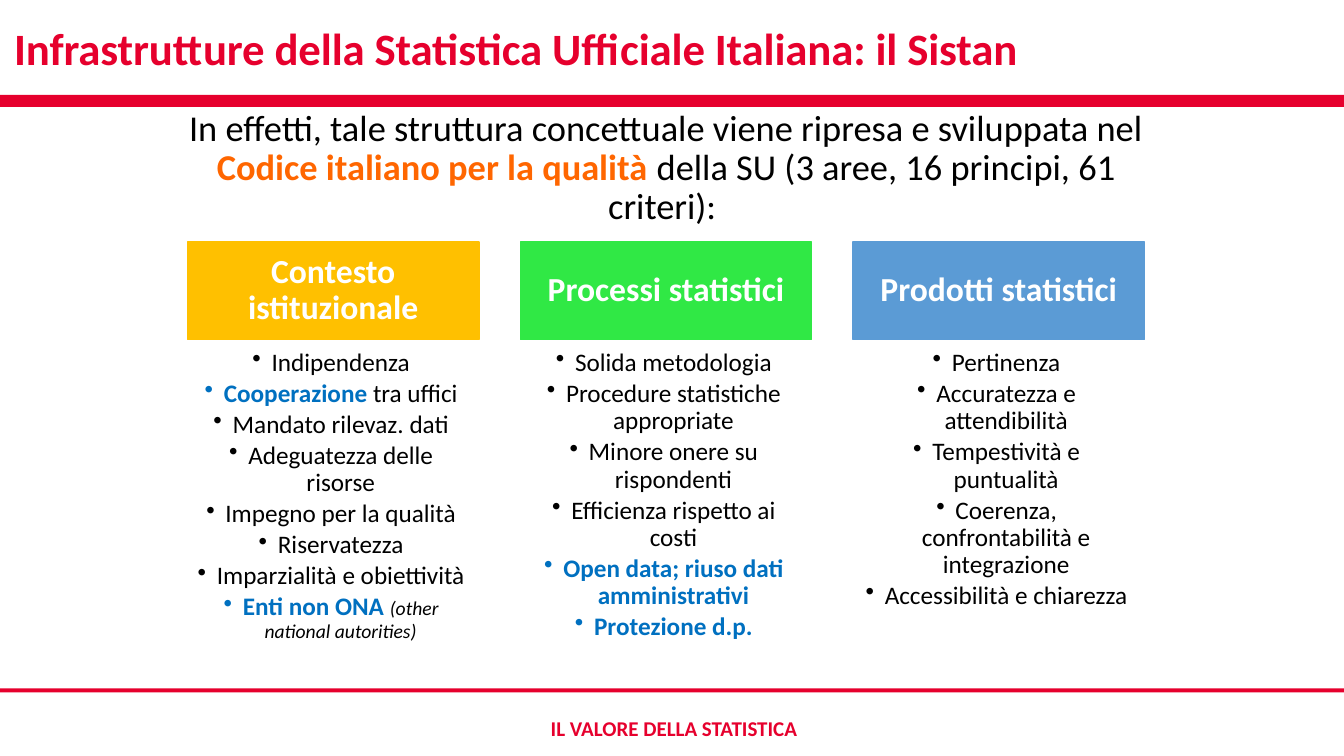
from lxml.etree import SubElement
from pptx import Presentation
from pptx.dml.color import RGBColor
from pptx.enum.shapes import MSO_SHAPE
from pptx.enum.text import MSO_ANCHOR as Anchor, PP_ALIGN as Align
from pptx.oxml.ns import qn
from pptx.util import Inches, Pt

COLORS = {"red": "E6002D", "black": "000000", "white": "FFFFFF", "orange": "FF6600",
          "blue": "0070C0", "amber": "FFC000", "green": "30E845", "sky": "5B9BD5"}


def add_runs(paragraph, runs, size):
    """Write (text, color, font options) runs into a paragraph."""
    for text, color, options in runs:
        run = paragraph.add_run()
        run.text = text
        formats = {"name": "Calibri", "size": Pt(size), "bold": False, **options}
        for attribute, value in formats.items():
            setattr(run.font, attribute, value)
        run.font.color.rgb = RGBColor.from_string(COLORS[color])


def set_frame(frame, anchor, margins):
    frame.word_wrap = True
    frame.vertical_anchor = anchor
    for side, margin in zip(("left", "top", "right", "bottom"), margins):
        setattr(frame, f"margin_{side}", Inches(margin))


BOLD = {"bold": True}
DEFAULT_MARGINS = (0.1, 0.05, 0.1, 0.05)

prs = Presentation()
prs.slide_width, prs.slide_height = Inches(13.33), Inches(7.5)
slide = prs.slides.add_slide(prs.slide_layouts[5])
shapes = slide.shapes

# Title
title = shapes.title
title.left, title.top, title.width, title.height = map(Inches, (0.04, 0.04, 13.13, 0.87))
set_frame(title.text_frame, Anchor.MIDDLE, DEFAULT_MARGINS)
title_line = title.text_frame.paragraphs[0]
title_line.alignment = Align.LEFT
add_runs(title_line, [("Infrastrutture della Statistica Ufficiale Italiana: il Sistan",
                       "red", BOLD)], 32)
title_line.runs[0].font._element.set("spc", "-10")

# Red rules under the title and above the footer
for top, height in ((0.94, 0.12), (6.83, 0.04)):
    rule = shapes.add_shape(MSO_SHAPE.RECTANGLE, 0, Inches(top), prs.slide_width, Inches(height))
    rule.shadow.inherit = False
    rule.fill.solid()
    rule.fill.fore_color.rgb = RGBColor.from_string(COLORS["red"])
    rule.line.fill.background()

# Introduction and footer
intro_runs = [
    ("In effetti, tale struttura concettuale viene ripresa e sviluppata nel ", "black", {}),
    ("Codice italiano per la qualità", "orange", BOLD),
    (" della SU (3 aree, 16 principi, 61 criteri): ", "black", {}),
]
footer_runs = [("IL VALORE DELLA STATISTICA", "red", BOLD)]
for place, runs, size, spacing in (((1.67, 1.04, 9.88, 1.3), intro_runs, 26, 0.9),
                                   ((2.83, 7.05, 7.71, 0.35), footer_runs, 15, 1.0)):
    box = shapes.add_textbox(*map(Inches, place))
    set_frame(box.text_frame, Anchor.TOP, DEFAULT_MARGINS)
    line = box.text_frame.paragraphs[0]
    line.alignment, line.line_spacing = Align.CENTER, spacing
    add_runs(line, runs, size)

# Areas of the code: heading, color, principles
areas = [
    ("Contesto istituzionale", "amber", [
        "Indipendenza",
        [("Cooperazione", "blue", BOLD), (" tra uffici", "black", {})],
        "Mandato rilevaz. dati",
        "Adeguatezza delle risorse",
        "Impegno per la qualità",
        "Riservatezza",
        "Imparzialità e obiettività",
        [("Enti non ONA ", "blue", BOLD),
         ("(other national autorities)", "black", {"size": Pt(14), "italic": True})],
    ]),
    ("Processi statistici", "green", [
        "Solida metodologia",
        "Procedure statistiche appropriate",
        "Minore onere su rispondenti",
        "Efficienza rispetto ai costi",
        [("Open data; riuso dati amministrativi", "blue", BOLD)],
        [("Protezione d.p.", "blue", BOLD)],
    ]),
    ("Prodotti statistici", "sky", [
        "Pertinenza",
        "Accuratezza e attendibilità",
        "Tempestività e puntualità",
        "Coerenza, confrontabilità e integrazione",
        "Accessibilità e chiarezza",
    ]),
]
LEFT, STEP, WIDTH = 1.86, 3.3, 2.89
HEADING_TOP, HEADING_HEIGHT, LIST_HEIGHT = 2.4, 0.97, 2.81

for column, (name, color, principles) in enumerate(areas):
    left = Inches(LEFT + column * STEP)

    # Colored heading
    heading = shapes.add_shape(MSO_SHAPE.RECTANGLE, left, Inches(HEADING_TOP),
                               Inches(WIDTH), Inches(HEADING_HEIGHT))
    heading.shadow.inherit = False
    heading.fill.solid()
    heading.fill.fore_color.rgb = RGBColor.from_string(COLORS[color])
    heading.line.color.rgb = RGBColor.from_string(COLORS[color])
    heading.line.width = Pt(1)
    set_frame(heading.text_frame, Anchor.MIDDLE, (0.19, 0.11, 0.19, 0.11))
    heading_line = heading.text_frame.paragraphs[0]
    heading_line.alignment, heading_line.line_spacing = Align.CENTER, 0.9
    add_runs(heading_line, [(name, "white", BOLD)], 24)

    # Bulleted principles
    box = shapes.add_textbox(left, Inches(HEADING_TOP + HEADING_HEIGHT),
                             Inches(WIDTH), Inches(LIST_HEIGHT))
    frame = box.text_frame
    set_frame(frame, Anchor.TOP, (0.1, 0.1, 0.14, 0.16))
    for row, principle in enumerate(principles):
        item = frame.add_paragraph() if row else frame.paragraphs[0]
        properties = item._p.get_or_add_pPr()
        properties.set("marL", str(Inches(0.19)))
        properties.set("indent", str(Inches(-0.19)))
        SubElement(properties, qn("a:buChar")).set("char", "•")
        item.level, item.alignment = 1, Align.CENTER
        item.line_spacing, item.space_after = 0.9, Pt(2.7)
        runs = [(principle, "black", {})] if isinstance(principle, str) else principle
        add_runs(item, runs, 18)

prs.save("out.pptx")
